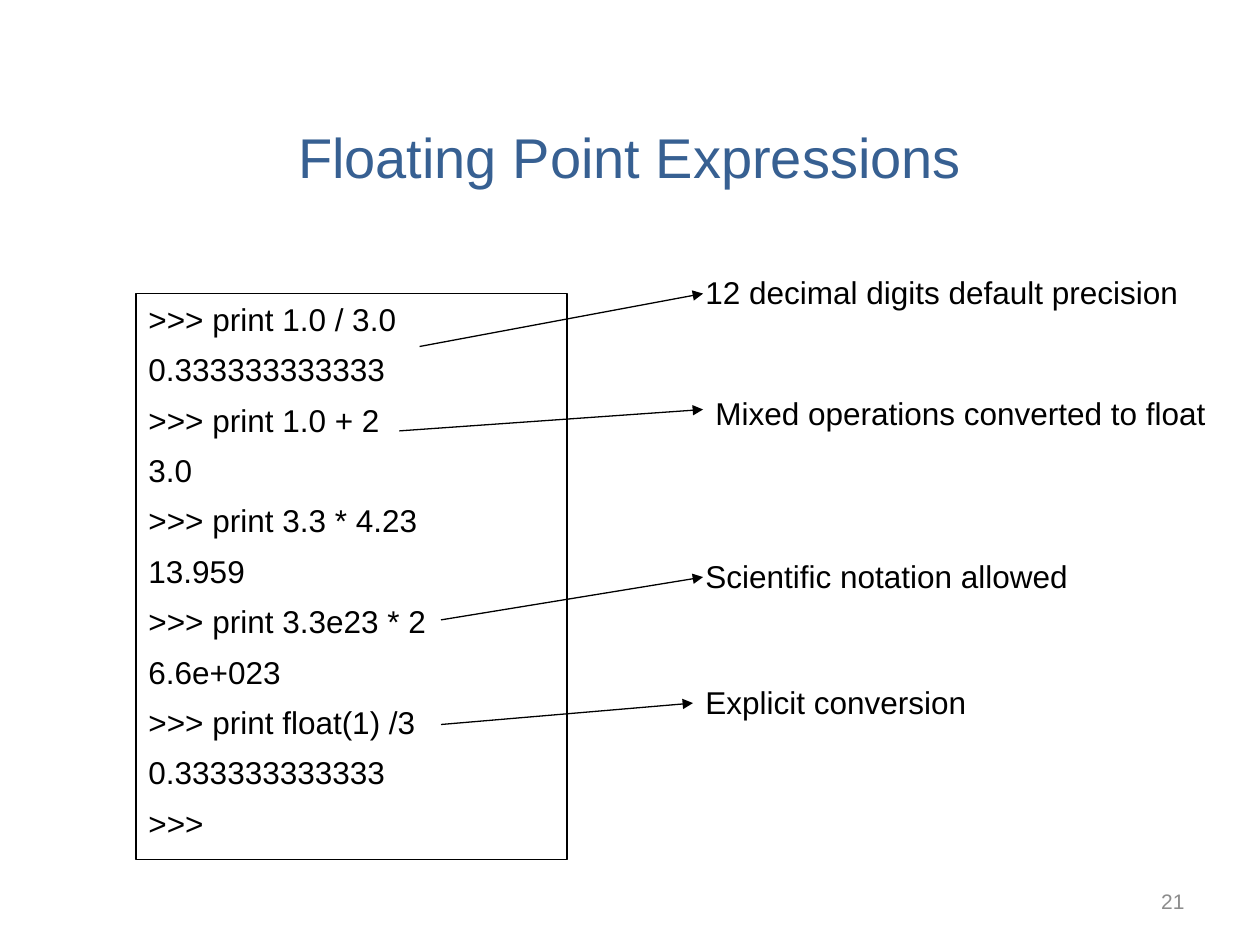
from lxml import etree
from pptx import Presentation
from pptx import util as u
from pptx.dml.color import RGBColor
from pptx.enum import shapes, text
from pptx.oxml.ns import qn

COLORS = {"title": "376092", "ink": "000000", "number": "8C8C8C"}
FONT = "Arial"

deck = Presentation()
deck.slide_width, deck.slide_height = u.Inches(10), u.Inches(7.5)
slide = deck.slides.add_slide(deck.slide_layouts[6])


def write(words, left, top, width, height, size=18, color="ink",
          align=text.PP_ALIGN.LEFT, anchor=text.MSO_ANCHOR.TOP,
          wrap=True, grow=False, space_after=0):
    box = slide.shapes.add_textbox(*map(u.Inches, (left, top, width, height)))
    frame = box.text_frame
    frame.text = words
    frame.word_wrap = wrap
    frame.vertical_anchor = anchor
    if grow:
        frame.auto_size = text.MSO_AUTO_SIZE.SHAPE_TO_FIT_TEXT
    for line in frame.paragraphs:
        line.alignment = align
        line.space_after = u.Pt(space_after)
        line.font.name = FONT
        line.font.size = u.Pt(size)
        line.font.color.rgb = RGBColor.from_string(COLORS[color])
    return box


# Title and slide number
write("Floating Point Expressions", 0.5, 0.92, 9, 0.97, size=32,
      color="title", align=text.PP_ALIGN.CENTER)
write("21", 7.17, 6.95, 2.33, 0.4, size=12, color="number",
      align=text.PP_ALIGN.RIGHT, anchor=text.MSO_ANCHOR.MIDDLE)

# Interpreter session
session_lines = [
    ">>> print 1.0 / 3.0", "0.333333333333",
    ">>> print 1.0 + 2", "3.0",
    ">>> print 3.3 * 4.23", "13.959",
    ">>> print 3.3e23 * 2", "6.6e+023",
    ">>> print float(1) /3", "0.333333333333",
    ">>>",
]
session = write("\n".join(session_lines), 1.08, 2.33, 3.42, 4.49,
                grow=True, space_after=7.2)
session.line.color.rgb = RGBColor.from_string(COLORS["ink"])
session.line.width = u.Pt(0.75)

# Remarks, each with an arrow from its expression:
# wording, left, top, width, arrow start, arrow end
remarks = [
    ("12 decimal digits default precision", 5.5, 2.12, 3.95, (3.33, 2.75), (5.58, 2.33)),
    ("Mixed operations converted to float", 5.58, 3.08, 4.09, (3.17, 3.42), (5.58, 3.25)),
    ("Scientific notation allowed", 5.5, 4.37, 3.08, (3.5, 4.92), (5.58, 4.58)),
    ("Explicit conversion", 5.5, 5.37, 2.27, (3.5, 5.75), (5.5, 5.58)),
]
for words, left, top, width, start, end in remarks:
    arrow = slide.shapes.add_connector(
        shapes.MSO_CONNECTOR.STRAIGHT, *map(u.Inches, start + end))
    arrow.line.color.rgb = RGBColor.from_string(COLORS["ink"])
    arrow.line.width = u.Pt(0.75)
    etree.SubElement(arrow.line._get_or_add_ln(), qn("a:tailEnd"), type="triangle")
    etree.SubElement(arrow._element.spPr, qn("a:effectLst"))
    write(words, left, top, width, 0.38, wrap=False, grow=True)

deck.save("out.pptx")
